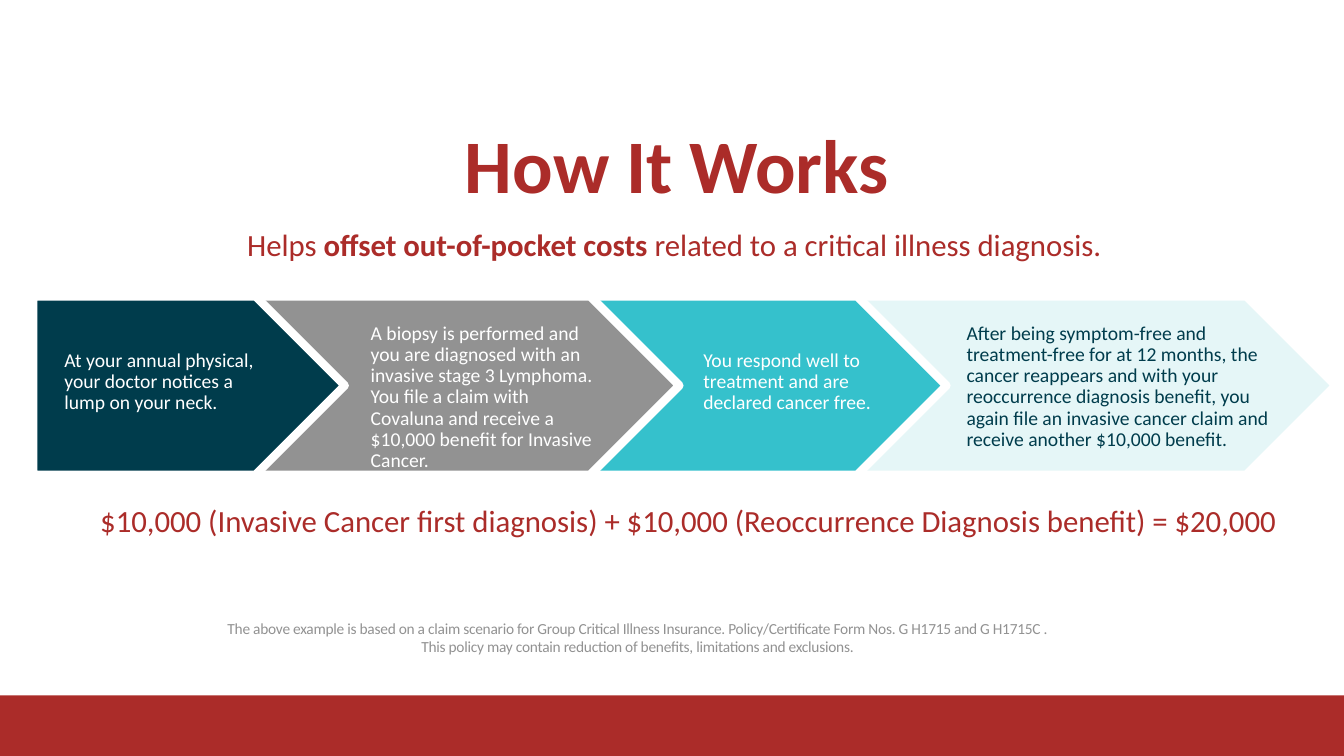
"""Build the "How It Works" slide with its chain of claim steps."""
from dataclasses import dataclass

import pptx
import pptx.dml.color
import pptx.enum.shapes
import pptx.enum.text
import pptx.util

Pt = pptx.util.Pt
Shape = pptx.enum.shapes.MSO_SHAPE
Align = pptx.enum.text.PP_ALIGN
FONT = "Calibri"
HUES = {
    "red": "AB2C29",
    "navy": "003C4C",
    "gray": "929292",
    "teal": "35C1CC",
    "mint": "E5F6F7",
    "white": "FFFFFF",
}
TOP, HIGH = 211.68, 127.44


@dataclass
class Step:
    """One arrow of the chain and its text."""
    left: float
    width: float
    fill: str
    ink: str
    text: str
    box: tuple[float, float, float]


@dataclass
class Note:
    """A centred text block, each line a list of (text, bold) runs."""
    box: tuple[float, float, float, float]
    size: float
    ink: str
    lines: list[list[tuple[str, bool]]]
    track: int = 0


STEPS = [
    Step(23.76, 222.48, "navy", "white",
         "At your annual physical, your doctor notices a lump on your neck.",
         (38.88, 246.96, 164.16)),
    Step(127.44, 357.84, "gray", "white",
         "A biopsy is performed and you are diagnosed with an invasive stage 3 "
         "Lymphoma. You file a claim with Covaluna and receive a $10,000 "
         "benefit for Invasive Cancer.",
         (257.76, 227.52, 180)),
    Step(318.24, 357.84, "teal", "white",
         "You respond well to treatment and are declared cancer free.",
         (495.36, 246.96, 155.52)),
    Step(596.16, 357.84, "mint", "navy",
         "After being symptom-free and treatment-free for at 12 months, the "
         "cancer reappears and with your reoccurrence diagnosis benefit, you "
         "again file an invasive cancer claim and receive another $10,000 benefit.",
         (683.28, 227.52, 236.16)),
]

NOTES = [
    Note((107.28, 157.68, 748.8, 63.36), 22, "red",
         [[("Helps ", False), ("offset out-of-pocket costs ", True),
           ("related to a critical illness diagnosis.", False)]]),
    Note((23.76, 354.96, 936, 63.36), 22, "red",
         [[("$10,000 (Invasive Cancer first diagnosis) + $10,000 "
            "(Reoccurrence Diagnosis benefit) = $20,000", False)]]),
    Note((77.76, 438.48, 755.28, 47.52), 11, "gray",
         [[("The above example is based on a claim scenario for Group Critical "
            "Illness Insurance. Policy/Certificate Form Nos. G H1715 and "
            "G H1715C .", False)],
          [("This policy may contain reduction of benefits, limitations and "
            "exclusions.", False)]], -20),
]


def tint(name: str) -> pptx.dml.color.RGBColor:
    """Return the named colour."""
    return pptx.dml.color.RGBColor.from_string(HUES[name])


def style(para, size: float, ink: str, bold: bool | None = None) -> None:
    """Set the font of a paragraph."""
    font = para.font
    font.name, font.size, font.bold = FONT, Pt(size), bold
    font.color.rgb = tint(ink)


def block(slide, kind, box: tuple[float, float, float, float], fill: str):
    """Draw a filled preset shape and return it."""
    shape = slide.shapes.add_shape(kind, *map(Pt, box))
    shape.shadow.inherit = False
    shape.fill.solid()
    shape.fill.fore_color.rgb = tint(fill)
    shape.line.fill.background()
    return shape


def frame(slide, box: tuple[float, float, float, float]):
    """Add a wrapping text box and return its text frame."""
    text = slide.shapes.add_textbox(*map(Pt, box)).text_frame
    text.word_wrap = True
    return text


def head(slide) -> None:
    """Place and format the title."""
    title = slide.shapes.title
    title.left, title.top, title.width, title.height = map(
        Pt, (228.24, 87.84, 510.48, 61.92))
    text = title.text_frame
    text.text = "How It Works"
    text.vertical_anchor = pptx.enum.text.MSO_ANCHOR.TOP
    text.auto_size = pptx.enum.text.MSO_AUTO_SIZE.NONE
    para = text.paragraphs[0]
    para.alignment, para.line_spacing = Align.CENTER, 0.9
    style(para, 54, "red", True)


def arrow(slide, step: Step) -> None:
    """Draw the arrow of a step."""
    shape = block(slide, Shape.PENTAGON,
                  (step.left, TOP, step.width, HIGH), step.fill)
    shape.line.color.rgb = tint("white")
    shape.line.width = Pt(6)


def label(slide, step: Step) -> None:
    """Write the text of a step."""
    para = frame(slide, (*step.box, 55.44)).paragraphs[0]
    para.text = step.text
    para.line_spacing = 0.9
    style(para, 14, step.ink)


def write(slide, note: Note) -> None:
    """Write a centred note."""
    text = frame(slide, note.box)
    for spot, line in enumerate(note.lines):
        para = text.add_paragraph() if spot else text.paragraphs[0]
        para.alignment = Align.CENTER
        style(para, note.size, note.ink)
        for words, bold in line:
            run = para.add_run()
            run.text = words
            if bold:
                run.font.bold = True
            if note.track:
                run._r.get_or_add_rPr().set("spc", str(note.track))


def main() -> None:
    """Build and save the deck."""
    deck = pptx.Presentation()
    deck.slide_width, deck.slide_height = Pt(960), Pt(540)
    slide = deck.slides.add_slide(deck.slide_layouts[5])
    head(slide)
    block(slide, Shape.RECTANGLE, (0, 496.8, 960, 43.2), "red")
    for step in reversed(STEPS):
        arrow(slide, step)
    for step in STEPS:
        label(slide, step)
    for note in NOTES:
        write(slide, note)
    deck.save("out.pptx")


if __name__ == "__main__":
    main()
